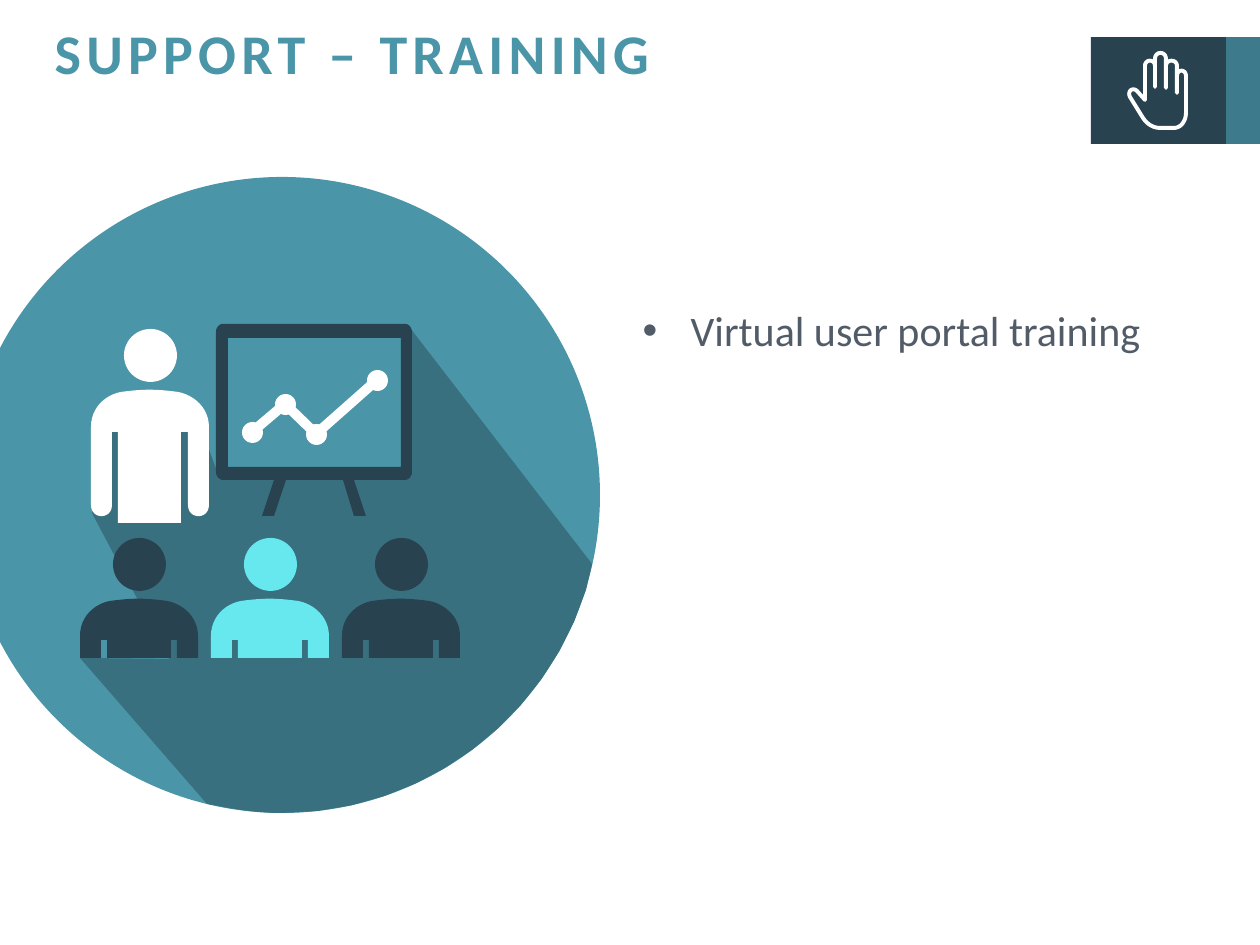
from dataclasses import dataclass

import pptx
import pptx.dml.color
import pptx.enum.shapes
import pptx.enum.text
import pptx.oxml
import pptx.oxml.ns
import pptx.util

PX = 914400 / 126
COLORS = {
    "teal": "4B95A9",
    "shade": "38707F",
    "navy": "294250",
    "aqua": "66E8EE",
    "white": "FFFFFF",
    "edge": "3D7A8B",
    "text": "525B68",
}
SHAPE = pptx.enum.shapes.MSO_SHAPE
HEAD_SIZE, HEAD_DX, HEAD_DY = 53, 33, -60
DOT_SIZE = 21

# In an outline a pair is a point and a six-tuple is a cubic curve.
Outline = list[tuple[int, ...]]

SHOULDERS: Outline = [
    (118, 38), (118, 19, 103, 6, 87, 3), (65, 0, 52, 0, 30, 3),
    (14, 6, 0, 19, 0, 38),
]
SEATED: Outline = SHOULDERS + [
    (0, 60), (21, 60), (21, 42), (27, 42), (27, 60),
    (91, 60), (91, 42), (97, 42), (97, 60), (118, 60),
]
STANDING: Outline = SHOULDERS + [
    (0, 116), (0, 131, 21, 131, 21, 116), (21, 43), (27, 43), (27, 134),
    (90, 134), (90, 43), (97, 43), (97, 116), (97, 131, 118, 131, 118, 116),
]
LONG_SHADOW: Outline = [
    (407, 324), (592, 564), (586, 590), (546, 718, 425, 813, 282, 813),
    (260, 813, 238, 810, 218, 806), (207, 804), (80, 658), (169, 659),
    (92, 513), (101, 427), (169, 410), (195, 412), (218, 474), (404, 476),
]
BOARD: Outline = [
    (223, 324), (405, 324), (409, 324, 412, 328, 412, 332), (412, 472),
    (412, 476, 409, 480, 405, 480), (354, 480), (366, 516), (354, 516),
    (343, 480), (286, 480), (274, 516), (262, 516), (274, 480), (223, 480),
    (219, 480, 216, 476, 216, 472), (216, 332), (216, 328, 219, 324, 223, 324),
]
SCREEN: Outline = [(228, 338), (228, 467), (401, 467), (401, 338)]
TREND = [(252, 432), (285, 404), (316, 434), (377, 380)]
HAND: Outline = [
    (1186, 76), (1186, 113), (1186, 121, 1181, 128, 1174, 128), (1160, 128),
    (1153, 128, 1147, 124, 1143, 118), (1130, 97),
    (1127, 91, 1133, 87, 1137, 91), (1145, 100), (1145, 66),
    (1145, 59, 1155, 59, 1155, 66), (1155, 87), (1155, 59),
    (1155, 51, 1166, 51, 1166, 59), (1166, 88), (1166, 66),
    (1166, 59, 1177, 59, 1177, 66), (1177, 93), (1177, 76),
    (1177, 69, 1186, 69, 1186, 76),
]


@dataclass
class Person:
    x: int
    y: int
    body: Outline
    color: str


PRESENTER = Person(91, 389, STANDING, "white")
AUDIENCE = [
    Person(80 + 131 * i, 598, SEATED, color)
    for i, color in enumerate(["navy", "aqua", "navy"])
]


def emu(px: float) -> int:
    return round(px * PX)


def rgb(name: str) -> pptx.dml.color.RGBColor:
    return pptx.dml.color.RGBColor.from_string(COLORS[name])


def flatten(outline: Outline, dx: int, dy: int, steps: int = 12) -> list[tuple[int, int]]:
    """Turn an outline into EMU points, sampling its curves."""
    points = []
    for segment in outline:
        if len(segment) == 2:
            points.append(segment)
            continue
        ends = [points[-1], segment[:2], segment[2:4], segment[4:]]
        for i in range(1, steps + 1):
            t = i / steps
            weights = ((1 - t) ** 3, 3 * t * (1 - t) ** 2, 3 * t * t * (1 - t), t ** 3)
            points.append(tuple(sum(w * e[k] for w, e in zip(weights, ends)) for k in (0, 1)))
    return [(emu(x + dx), emu(y + dy)) for x, y in points]


def paint(sp, fill: str | None, line: str | None = None, width: float = 0) -> None:
    sp.shadow.inherit = False
    if fill:
        sp.fill.solid()
        sp.fill.fore_color.rgb = rgb(fill)
    else:
        sp.fill.background()
    if line:
        sp.line.color.rgb = rgb(line)
        sp.line.width = pptx.util.Pt(width)
    else:
        sp.line.fill.background()


def draw_preset(shapes, kind, x: int, y: int, w: int, h: int, fill: str) -> None:
    paint(shapes.add_shape(kind, emu(x), emu(y), emu(w), emu(h)), fill)


def draw_outlines(shapes, outlines: list[Outline], fill: str | None,
                  dx: int = 0, dy: int = 0, **line) -> None:
    """Draw closed outlines as one shape; an inner outline makes a hole."""
    first, *others = [flatten(o, dx, dy) for o in outlines]
    builder = shapes.build_freeform(*first[0], scale=1.0)
    builder.add_line_segments(first[1:], close=True)
    for points in others:
        builder.move_to(*points[0])
        builder.add_line_segments(points[1:], close=True)
    paint(builder.convert_to_shape(), fill, **line)


def draw_person(shapes, person: Person) -> None:
    draw_outlines(shapes, [person.body], person.color, person.x, person.y)
    draw_preset(shapes, SHAPE.OVAL, person.x + HEAD_DX, person.y + HEAD_DY,
                HEAD_SIZE, HEAD_SIZE, person.color)


def draw_trend(shapes) -> None:
    for start, end in zip(TREND, TREND[1:]):
        c = shapes.add_connector(pptx.enum.shapes.MSO_CONNECTOR.STRAIGHT,
                                 *map(emu, start + end))
        c.line.color.rgb = rgb("white")
        c.line.width = pptx.util.Pt(5.6)
        c._element.spPr.append(pptx.oxml.parse_xml(
            f"<a:effectLst {pptx.oxml.ns.nsdecls('a')}/>"))
    for x, y in TREND:
        draw_preset(shapes, SHAPE.OVAL, x - DOT_SIZE // 2, y - DOT_SIZE // 2,
                    DOT_SIZE, DOT_SIZE, "white")


def write(sp, text: str, box: tuple[int, int, int, int], *, size: int, color: str,
          bold: bool = False, spacing: float = 1.0, before: int = 0,
          tracking: int = 0, hanging: int = 0) -> None:
    sp.left, sp.top, sp.width, sp.height = map(emu, box)
    tf = sp.text_frame
    tf.word_wrap = True
    tf.auto_size = pptx.enum.text.MSO_AUTO_SIZE.NONE
    tf.vertical_anchor = pptx.enum.text.MSO_ANCHOR.TOP
    p = tf.paragraphs[0]
    p.alignment = pptx.enum.text.PP_ALIGN.LEFT
    p.line_spacing = spacing
    p.space_before = pptx.util.Pt(before)
    if hanging:
        pPr = p._p.get_or_add_pPr()
        pPr.set("marL", str(emu(hanging)))
        pPr.set("indent", str(-emu(hanging)))
        bullet = pptx.oxml.parse_xml(f'<a:buChar {pptx.oxml.ns.nsdecls("a")} char="•"/>')
        pPr.append(bullet)
    r = p.add_run()
    r.text = text
    r.font.name = "Calibri"
    r.font.size = pptx.util.Pt(size)
    r.font.bold = bold
    r.font.color.rgb = rgb(color)
    if tracking:
        r._r.get_or_add_rPr().set("spc", str(tracking * 100))


def main() -> None:
    prs = pptx.Presentation()
    prs.slide_width, prs.slide_height = emu(1260), emu(945)
    s = prs.slides.add_slide(prs.slide_layouts[1])
    write(s.shapes.title, "SUPPORT – TRAINING", (42, 25, 1213, 120),
          size=32, color="teal", bold=True, spacing=0.8, tracking=3)
    write(s.placeholders[1], "Virtual user portal training", (630, 304, 533, 553),
          size=24, color="text", spacing=0.9, before=18, hanging=48)

    badge = s.shapes.add_group_shape().shapes
    draw_preset(badge, SHAPE.OVAL, -36, 177, 636, 636, "teal")
    draw_outlines(badge, [LONG_SHADOW], "shade")
    draw_outlines(badge, [BOARD, SCREEN], "navy")
    draw_trend(badge)
    for person in [PRESENTER, *AUDIENCE]:
        draw_person(badge, person)

    draw_preset(s.shapes, SHAPE.RECTANGLE, 1091, 37, 169, 107, "navy")
    draw_outlines(s.shapes, [HAND], None, line="white", width=2.25)
    draw_preset(s.shapes, SHAPE.RECTANGLE, 1226, 37, 34, 107, "edge")
    prs.save("out.pptx")


if __name__ == "__main__":
    main()
